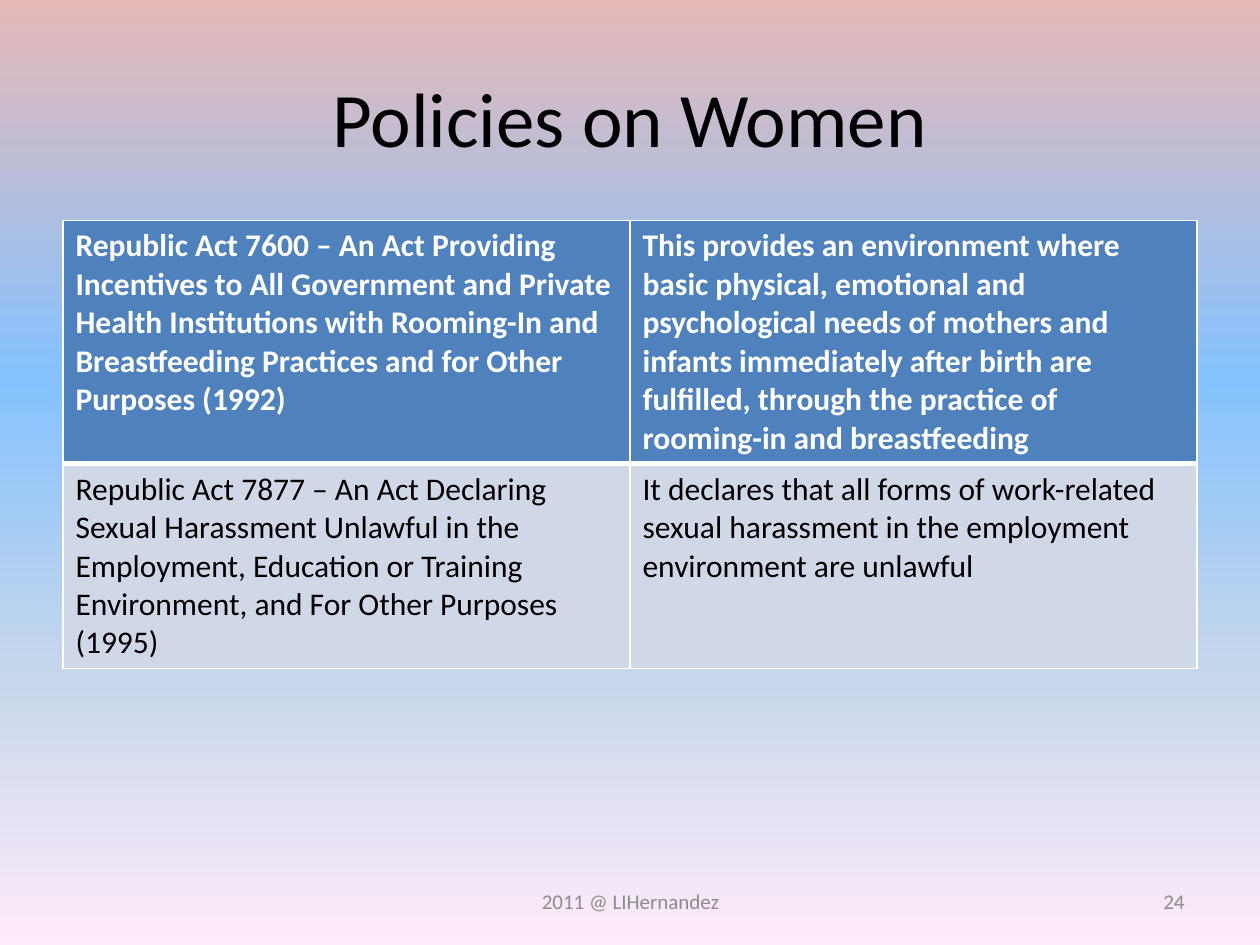
from lxml import etree
from pptx import Presentation
from pptx.dml.color import RGBColor
from pptx.enum.text import MSO_ANCHOR, PP_ALIGN
from pptx.oxml.ns import qn
from pptx.util import Inches, Pt

CENTER, RIGHT, LEFT = PP_ALIGN.CENTER, PP_ALIGN.RIGHT, PP_ALIGN.LEFT
MIDDLE = MSO_ANCHOR.MIDDLE

TITLE = "Policies on Women"
POLICIES = [
    ("Republic Act 7600 – An Act Providing Incentives to All Government and Private "
     "Health Institutions with Rooming-In and Breastfeeding Practices and for Other "
     "Purposes (1992)",
     "This provides an environment where basic physical, emotional and psychological "
     "needs of mothers and infants immediately after birth are fulfilled, through the "
     "practice of rooming-in and breastfeeding"),
    ("Republic Act 7877 – An Act Declaring Sexual Harassment Unlawful in the "
     "Employment, Education or Training Environment, and For Other Purposes (1995)",
     "It declares that all forms of work-related sexual harassment in the employment "
     "environment are unlawful"),
]
FOOTERS = [
    ("2011 @ LIHernandez", 3.42, 3.17, CENTER),
    ("24", 7.17, 2.33, RIGHT),
]

THEME = {
    "font": "Calibri",
    "background": [(0, "E6B9B8"), (40, "85C2FF"), (70, "C4D6EB"), (100, "FFEBFA")],
    "title": {"size": 44, "color": "000000", "bold": False},
    "footer": {"size": 12, "color": "8C8C8C", "bold": False},
    "rows": [
        {"fill": "4F81BD", "rule_below": 3,
         "text": {"size": 18, "color": "FFFFFF", "bold": True}},
        {"fill": "D0D8E8", "rule_below": 1,
         "text": {"size": 18, "color": "000000", "bold": False}},
    ],
    "border": "FFFFFF",
}
MARGIN, CONTENT_WIDTH = 0.5, 9
TABLE_TOP, ROW_HEIGHTS = 1.75, (1.92, 1.62)


def write(frame, text, style, align=LEFT):
    frame.word_wrap = True
    paragraph = frame.paragraphs[0]
    paragraph.alignment = align
    run = paragraph.add_run()
    run.text = text
    font_values = {"name": THEME["font"], "size": Pt(style["size"]), "bold": style["bold"]}
    for attribute, value in font_values.items():
        setattr(run.font, attribute, value)
    run.font.color.rgb = RGBColor.from_string(style["color"])


def add_solid_fill(parent, color):
    fill = etree.SubElement(parent, qn("a:solidFill"))
    etree.SubElement(fill, qn("a:srgbClr"), val=color)


def paint_background(slide):
    fill = slide.background.fill
    fill.gradient()
    fill.gradient_angle = 270
    stops = next(slide.element.iter(qn("a:gsLst")))
    for stop in list(stops):
        stops.remove(stop)
    for percent, color in THEME["background"]:
        stop = etree.SubElement(stops, qn("a:gs"), pos=str(percent * 1000))
        etree.SubElement(stop, qn("a:srgbClr"), val=color)


def set_borders(cell, widths):
    """Draw the left, right, top and bottom cell borders, widths in points."""
    properties = cell._tc.get_or_add_tcPr()
    for index, (side, width) in enumerate(zip("LRTB", widths)):
        line = etree.Element(qn(f"a:ln{side}"), w=str(Pt(width)))
        add_solid_fill(line, THEME["border"])
        properties.insert(index, line)


def add_policy_table(slide):
    table = slide.shapes.add_table(
        len(POLICIES), len(POLICIES[0]), Inches(MARGIN), Inches(TABLE_TOP),
        Inches(CONTENT_WIDTH), Inches(sum(ROW_HEIGHTS))).table
    rule_above = 1
    for row, height, policy, look in zip(table.rows, ROW_HEIGHTS, POLICIES, THEME["rows"]):
        row.height = Inches(height)
        for cell, text in zip(row.cells, policy):
            cell.fill.solid()
            cell.fill.fore_color.rgb = RGBColor.from_string(look["fill"])
            set_borders(cell, (1, 1, rule_above, look["rule_below"]))
            write(cell.text_frame, text, look["text"])
        rule_above = look["rule_below"]


def main():
    deck = Presentation()
    deck.slide_width, deck.slide_height = Inches(10), Inches(7.5)
    slide = deck.slides.add_slide(deck.slide_layouts[5])
    paint_background(slide)

    title = slide.shapes.title
    title_box = {"left": MARGIN, "top": 0.3, "width": CONTENT_WIDTH, "height": 1.25}
    for attribute, value in title_box.items():
        setattr(title, attribute, Inches(value))
    title.text_frame.vertical_anchor = MIDDLE
    write(title.text_frame, TITLE, THEME["title"], CENTER)

    add_policy_table(slide)

    for text, left, width, align in FOOTERS:
        footer = slide.shapes.add_textbox(
            Inches(left), Inches(6.95), Inches(width), Inches(0.4))
        footer.text_frame.vertical_anchor = MIDDLE
        write(footer.text_frame, text, THEME["footer"], align)

    deck.save("out.pptx")


if __name__ == "__main__":
    main()
